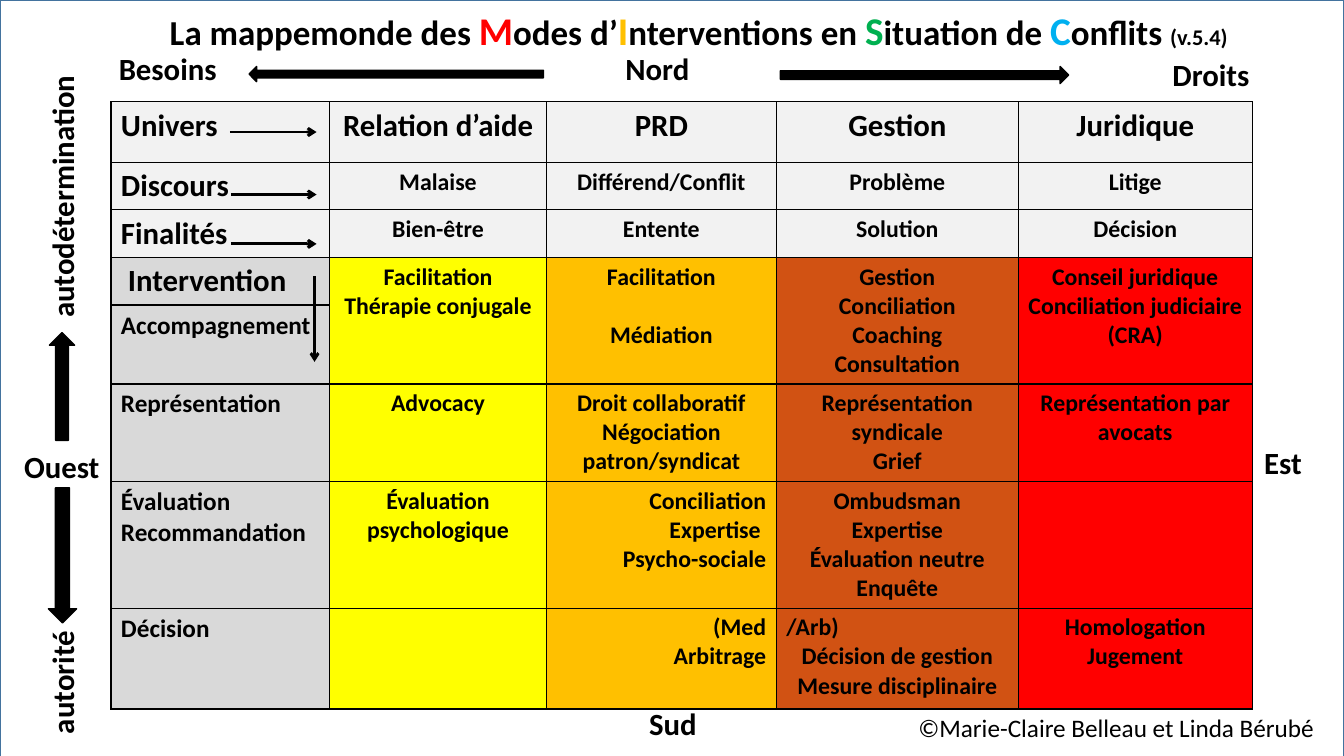
import pptx
import pptx.dml.color
import pptx.enum.shapes
import pptx.enum.text
import pptx.oxml
import pptx.oxml.ns
import pptx.util
from pptx.util import Inches

SHAPE = pptx.enum.shapes.MSO_SHAPE
ALIGN = pptx.enum.text.PP_ALIGN
ANCHOR = pptx.enum.text.MSO_ANCHOR
AUTO_SIZE = pptx.enum.text.MSO_AUTO_SIZE


class Theme:
    font = "Calibri"
    black, white, frame = "000000", "FFFFFF", "43739E"
    heading_fill, level_fill = "F2F2F2", "D9D9D9"
    world_fills = ["FFFF00", "FFC000", "D15213", "FF0000"]
    initials = {"M": "FF0000", "I": "FFC000", "S": "00B050", "C": "00B0F0"}
    title, initial, version = 25, 28, 16
    heading, level, body = 22, 18, 17


def rgb(value):
    return pptx.dml.color.RGBColor.from_string(value)


def set_font(font, size, color=Theme.black, bold=True):
    font.name, font.size, font.bold = Theme.font, pptx.util.Pt(size), bold
    font.color.rgb = rgb(color)


deck = pptx.Presentation()
deck.slide_width, deck.slide_height = Inches(13.33), Inches(7.5)
slide = deck.slides.add_slide(deck.slide_layouts[5])
shapes = slide.shapes

# Title with coloured initials
title = shapes.title
title.left, title.top = Inches(1.47), Inches(-0.3)
title.width, title.height = Inches(10.92), Inches(1.25)
title.text_frame.auto_size = AUTO_SIZE.NONE
title.text_frame.vertical_anchor = ANCHOR.MIDDLE
headline = title.text_frame.paragraphs[0]
headline.alignment, headline.line_spacing = ALIGN.CENTER, 0.9
for words in ["La mappemonde des ", "M", "odes d’", "I", "nterventions en ", "S",
              "ituation de ", "C", "onflits ", "(v.5.4)"]:
    run = headline.add_run()
    run.text = words
    if words in Theme.initials:
        set_font(run.font, Theme.initial, Theme.initials[words])
    else:
        set_font(run.font, Theme.version if words == "(v.5.4)" else Theme.title)

# White backdrop and compass arrows
for preset, left, top, width, height, fill, line in [
    (SHAPE.RECTANGLE, 0, 0, 13.33, 7.68, Theme.white, Theme.frame),
    (SHAPE.DOWN_ARROW, 0.48, 4.84, 0.28, 1.34, Theme.black, Theme.black),
    (SHAPE.UP_ARROW, 0.49, 3.3, 0.25, 1.07, Theme.black, Theme.black),
    (SHAPE.RIGHT_ARROW, 7.74, 0.66, 2.86, 0.17, Theme.black, Theme.black),
    (SHAPE.LEFT_ARROW, 2.47, 0.66, 2.92, 0.15, Theme.black, Theme.black),
]:
    block = shapes.add_shape(preset, Inches(left), Inches(top), Inches(width), Inches(height))
    block.shadow.inherit = False
    block.fill.solid()
    block.fill.fore_color.rgb = rgb(fill)
    block.line.color.rgb = rgb(line)
    block.line.width = pptx.util.Pt(1)
    if preset == SHAPE.RECTANGLE:
        title._element.addprevious(block._element)

# Map of interventions: None marks a cell covered by the merge above it
rows = [
    ["Univers", "Relation d’aide", "PRD", "Gestion", "Juridique"],
    ["Discours", "Malaise", "Différend/Conflit", "Problème", "Litige"],
    ["Finalités", "Bien-être", "Entente", "Solution", "Décision"],
    [" Intervention", "Facilitation\nThérapie conjugale", "Facilitation\nMédiation",
     "Gestion\nConciliation\nCoaching\nConsultation",
     "Conseil juridique\nConciliation judiciaire (CRA)"],
    ["Accompagnement", None, None, None, None],
    ["Représentation", "Advocacy", "Droit collaboratif\nNégociation patron/syndicat",
     "Représentation syndicale\nGrief", "Représentation par avocats"],
    ["Évaluation\nRecommandation", "Évaluation psychologique",
     "Conciliation\nExpertise \nPsycho-sociale",
     "Ombudsman\nExpertise\nÉvaluation neutre\nEnquête", ""],
    ["Décision", "", "(Med\nArbitrage", "/Arb)\nDécision de gestion\nMesure disciplinaire",
     "Homologation\nJugement"],
]
column_widths = [2.17, 2.15, 2.28, 2.4, 2.32]
row_heights = [0.6, 0.47, 0.47, 0.47, 0.78, 0.97, 1.25, 1]
worlds = shapes.add_table(len(rows), len(column_widths), Inches(1.1), Inches(1.01),
                          Inches(sum(column_widths)), Inches(sum(row_heights))).table
worlds.first_row = worlds.horz_banding = False
for column, width in zip(worlds.columns, column_widths):
    column.width = Inches(width)
for row, height in zip(worlds.rows, row_heights):
    row.height = Inches(height)

for r, texts in enumerate(rows):
    for c, text in enumerate(texts):
        cell = worlds.cell(r, c)
        for side in ["lnL", "lnR", "lnT", "lnB"]:
            cell._tc.get_or_add_tcPr().append(pptx.oxml.parse_xml(
                f'<a:{side} {pptx.oxml.ns.nsdecls("a")} w="12700"><a:solidFill>'
                f'<a:srgbClr val="{Theme.black}"/></a:solidFill></a:{side}>'))
        if r < 3:
            fill = Theme.heading_fill
        else:
            fill = Theme.world_fills[c - 1] if c else Theme.level_fill
        cell.fill.solid()
        cell.fill.fore_color.rgb = rgb(fill)
        if text is None:
            continue
        if r == 0 or (c == 0 and r < 4):
            size = Theme.heading
        else:
            size = Theme.body if c else Theme.level
        cell.text_frame.text = text
        for paragraph in cell.text_frame.paragraphs:
            if c == 0 or paragraph.text == "/Arb)":
                paragraph.alignment = ALIGN.LEFT
            else:
                paragraph.alignment = ALIGN.RIGHT if c == 2 and r > 5 else ALIGN.CENTER
            if paragraph.text == "Médiation":
                paragraph.space_before = pptx.util.Pt(20.75)
            set_font(paragraph.font, size, bold=True)
for c in range(1, len(column_widths)):
    worlds.cell(3, c).merge(worlds.cell(4, c))

# Compass points, poles and copyright
for text, left, top, width, height, wrap, rotation in [
    ("Nord", 5.92, 0.44, 1.2, 0.47, True, 0),
    ("Sud", 6.34, 6.94, 0.98, 0.47, True, 0),
    ("Ouest", 0.14, 4.39, 1.08, 0.47, True, 0),
    ("Est", 12.44, 4.35, 0.58, 0.47, False, 0),
    ("autodétermination", -0.7, 1.7, 2.63, 0.47, False, 270),
    ("autorité", 0, 6.53, 1.23, 0.47, False, 270),
    ("Droits", 11.53, 0.5, 0.97, 0.47, False, 0),
    ("Besoins", 1.08, 0.44, 1.2, 0.47, True, 0),
    ("©Marie-Claire Belleau et Linda Bérubé", 9.01, 7.02, 4.25, 0.4, True, 0),
]:
    label = shapes.add_textbox(Inches(left), Inches(top), Inches(width), Inches(height))
    label.rotation = rotation
    label.text_frame.word_wrap = wrap
    label.text_frame.auto_size = AUTO_SIZE.SHAPE_TO_FIT_TEXT
    paragraph = label.text_frame.paragraphs[0]
    paragraph.text = text
    paragraph.alignment = ALIGN.CENTER if text == "Nord" else ALIGN.LEFT
    is_copyright = text.startswith("©")
    set_font(paragraph.font, Theme.level if is_copyright else Theme.heading,
             bold=not is_copyright)

# Reading arrows beside the row headings
for x1, y1, x2, y2 in [(2.28, 1.31, 3.14, 1.31), (2.29, 1.93, 3.14, 1.93),
                       (3.12, 2.74, 3.12, 3.59), (2.29, 2.42, 3.14, 2.42)]:
    arrow = shapes.add_connector(pptx.enum.shapes.MSO_CONNECTOR.STRAIGHT,
                                 Inches(x1), Inches(y1), Inches(x2), Inches(y2))
    arrow.line.color.rgb = rgb(Theme.black)
    arrow.line.width = pptx.util.Pt(2)
    for parent, tag in [(arrow.line._get_or_add_ln(), '<a:tailEnd {} type="arrow"/>'),
                        (arrow._element.spPr, "<a:effectLst {}/>")]:
        parent.append(pptx.oxml.parse_xml(tag.format(pptx.oxml.ns.nsdecls("a"))))

deck.save("out.pptx")
